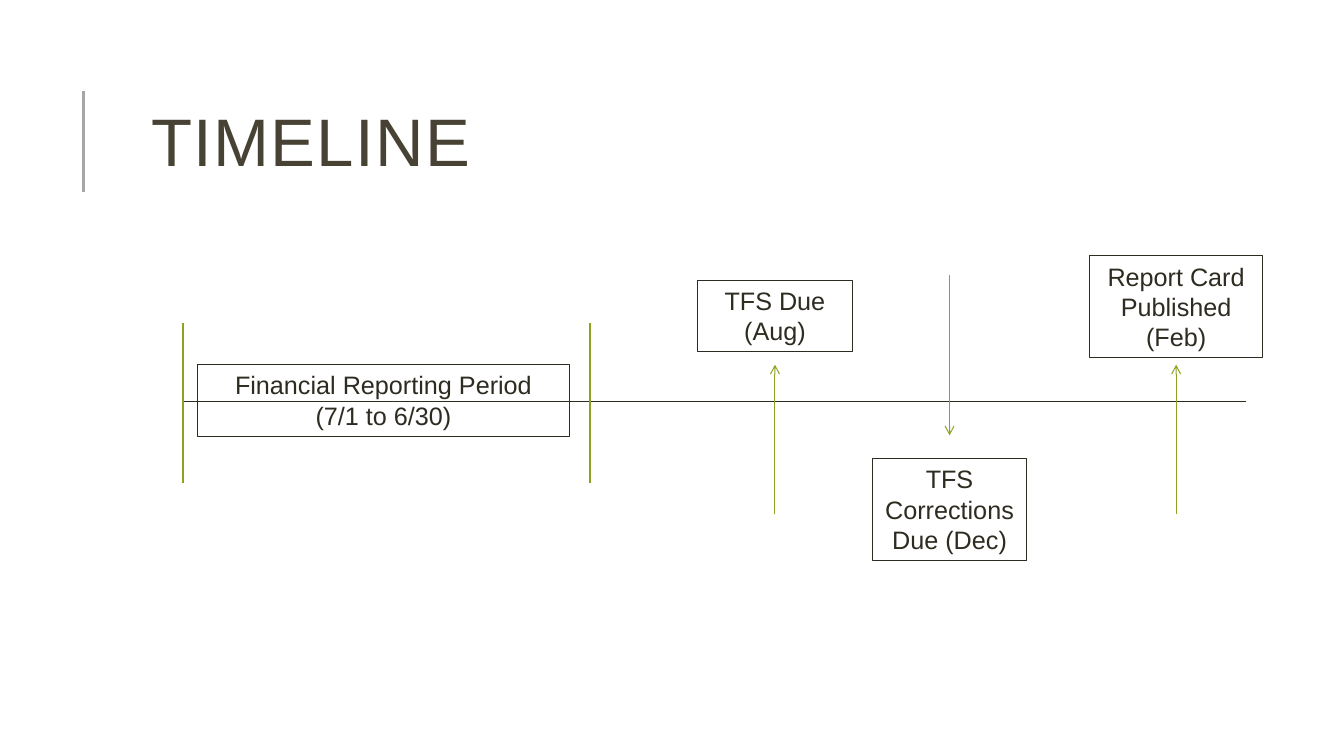
import pptx
import pptx.dml.color
import pptx.enum.shapes
import pptx.enum.text
import pptx.oxml
import pptx.oxml.ns
import pptx.util
from pptx.util import Cm

INK, GREEN, GRAY, TITLE = "2E2B21", "8CA221", "A6A6A6", "474233"
ALIGN = pptx.enum.text.PP_ALIGN
ANCHOR = pptx.enum.text.MSO_ANCHOR


def rgb(value):
    return pptx.dml.color.RGBColor.from_string(value)


def add_element(parent, tag, **attributes):
    el = pptx.oxml.parse_xml(f"<{tag} {pptx.oxml.ns.nsdecls('a')}/>")
    for name, value in attributes.items():
        el.set(name, value)
    parent.append(el)


def set_text(s, text, size=18, color=INK, align=ALIGN.CENTER,
             anchor=ANCHOR.TOP, line_spacing=None, tracking=None):
    """Write each line of text as its own paragraph."""
    tf = s.text_frame
    tf.word_wrap = True
    tf.vertical_anchor = anchor
    for i, line in enumerate(text.split("\n")):
        p = tf.add_paragraph() if i else tf.paragraphs[0]
        p.alignment = align
        p.line_spacing = line_spacing
        r = p.add_run()
        r.text = line
        r.font.name = "Arial"
        r.font.size = pptx.util.Pt(size)
        r.font.color.rgb = rgb(color)
        if tracking:
            r.font._element.set("spc", str(tracking * 100))


def add_line(slide, x1, y1, x2, y2, color, width, arrow=False):
    s = slide.shapes.add_connector(
        pptx.enum.shapes.MSO_CONNECTOR.STRAIGHT, Cm(x1), Cm(y1), Cm(x2), Cm(y2))
    s.line.color.rgb = rgb(color)
    s.line.width = pptx.util.Pt(width)
    if arrow:
        add_element(s.line._get_or_add_ln(), "a:tailEnd", type="arrow")
    add_element(s._element.spPr, "a:effectLst")


def add_label(slide, x, y, w, h, text):
    s = slide.shapes.add_shape(
        pptx.enum.shapes.MSO_SHAPE.RECTANGLE, Cm(x), Cm(y), Cm(w), Cm(h))
    s.shadow.inherit = False
    s.fill.background()
    s.line.color.rgb = rgb(INK)
    s.line.width = pptx.util.Pt(0.75)
    set_text(s, text)


def add_title(slide, x, y, w, h, text):
    """Title with a vertical rule to its left."""
    add_line(slide, x - 1.45, y + 3.2, x - 1.45, y + 0.66, GRAY, 1.75)
    s = slide.shapes.add_textbox(Cm(x), Cm(y), Cm(w), Cm(h))
    set_text(s, text, size=48, color=TITLE, align=ALIGN.LEFT,
             anchor=ANCHOR.MIDDLE, line_spacing=0.8, tracking=1)


def add_timeline(slide, x, y, w, h):
    """Axis across the middle of the box, a period and dated events."""
    axis = y + h / 2
    add_line(slide, x, axis, x + w, axis, INK, 0.75)

    period = 10.24
    for tick in (x, x + period):
        add_line(slide, tick, axis - 1.98, tick, axis + 2.06, GREEN, 1.25)
    add_label(slide, x + 0.36, axis - 0.92, 9.37, 1.8,
              "Financial Reporting Period\n(7/1 to 6/30)")

    # Offset along the axis, arrow start and end, label top, width, height
    events = [
        (14.91, 2.84, -0.92, -3.05, 3.89, 1.8, "TFS Due (Aug)"),
        (19.31, -3.18, 0.86, 1.45, 3.89, 2.57, "TFS Corrections Due (Dec)"),
        (25.02, 2.84, -0.92, -3.66, 4.37, 2.57, "Report Card Published (Feb)"),
    ]
    for offset, start, end, top, width, height, text in events:
        center = x + offset
        add_line(slide, center, axis + start, center, axis + end, GREEN, 0.75, arrow=True)
        add_label(slide, center - width / 2, axis + top, width, height, text)


def main():
    prs = pptx.Presentation()
    prs.slide_width, prs.slide_height = Cm(33.87), Cm(19.05)
    slide = prs.slides.add_slide(prs.slide_layouts[6])
    add_title(slide, 3.56, 1.63, 27, 4.17, "TIMELINE")
    add_timeline(slide, 4.62, 6.11, 26.77, 8)
    prs.save("out.pptx")


if __name__ == "__main__":
    main()
